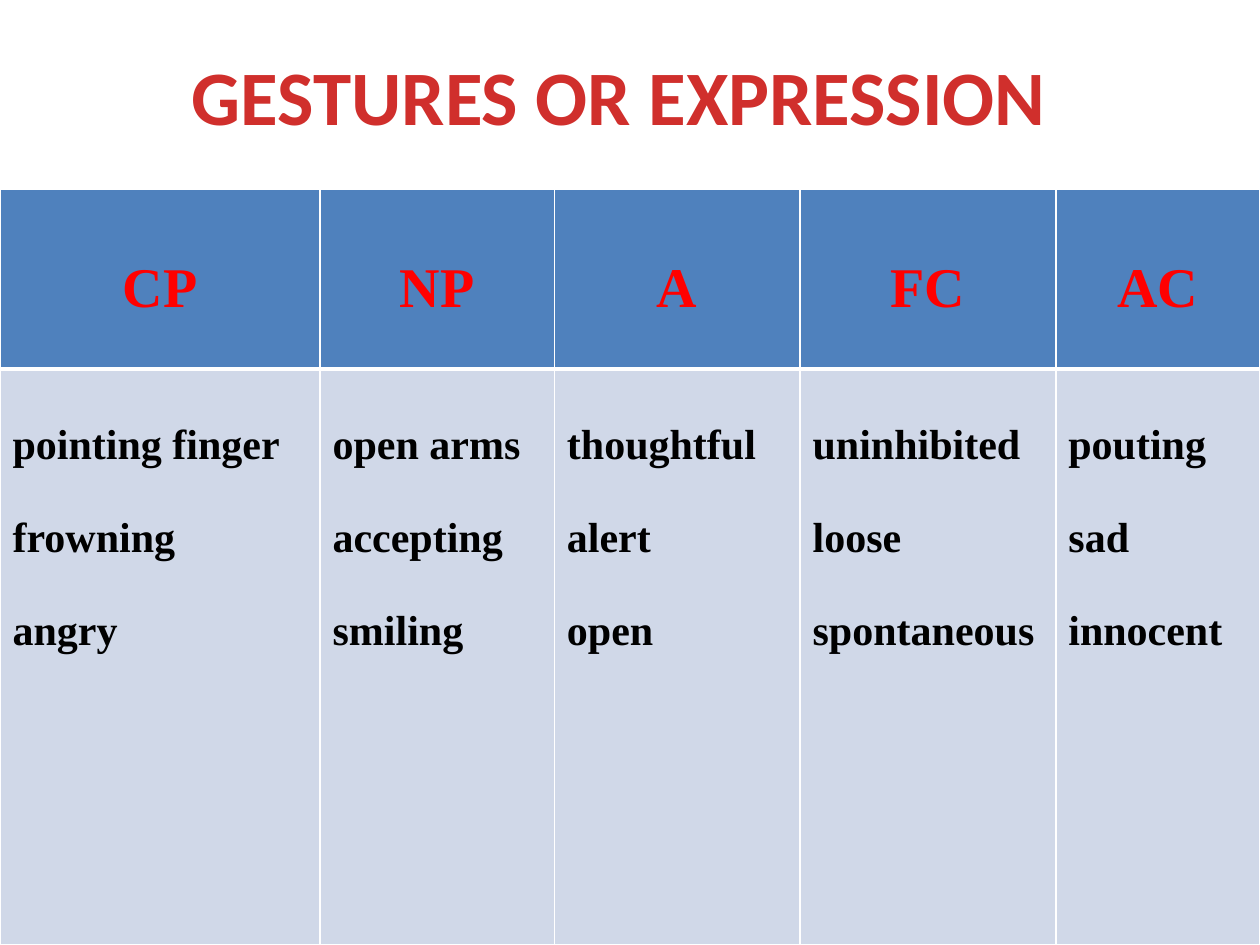
import pptx
import pptx.util
import pptx.dml.color
import pptx.enum.text
import pptx.oxml
import lxml.etree

COLOURS = {"title": "D02F2C", "heading": "FF0000", "body": "000000",
           "header_fill": "4F81BD", "body_fill": "D0D8E8", "border": "FFFFFF"}
GESTURES = {
    "CP": ["pointing finger", "frowning", "angry"],
    "NP": ["open arms", "accepting", "smiling"],
    "A": ["thoughtful", "alert", "open"],
    "FC": ["uninhibited", "loose", "spontaneous"],
    "AC": ["pouting", "sad", "innocent"],
}
COLUMN_WIDTHS = [2.54, 1.86, 1.95, 2.03, 1.62]
ROW_HEIGHTS = [1.43, 4.57]
CENTER = pptx.enum.text.PP_ALIGN.CENTER
LEFT = pptx.enum.text.PP_ALIGN.LEFT


def format_text(para, font_name, size, colour, alignment):
    para.alignment = alignment
    for span in para.runs:
        span.font.name = font_name
        span.font.size = pptx.util.Pt(size)
        span.font.bold = True
        span.font.color.rgb = pptx.dml.color.RGBColor.from_string(COLOURS[colour])


def add_border(cell, side, width):
    properties = cell._tc.get_or_add_tcPr()
    line = lxml.etree.SubElement(properties, pptx.oxml.ns.qn(f"a:ln{side}"),
                                 w=str(pptx.util.Pt(width)))
    fill = lxml.etree.SubElement(line, pptx.oxml.ns.qn("a:solidFill"))
    lxml.etree.SubElement(fill, pptx.oxml.ns.qn("a:srgbClr"), val=COLOURS["border"])


deck = pptx.Presentation()
deck.slide_width = pptx.util.Inches(10)
deck.slide_height = pptx.util.Inches(7.5)
page = deck.slides.add_slide(deck.slide_layouts[5])

# Title
title = page.shapes.title
title.left, title.top = pptx.util.Inches(1.08), pptx.util.Inches(0.33)
title.width, title.height = pptx.util.Inches(7.67), pptx.util.Inches(0.84)
title.text_frame.text = "GESTURES OR EXPRESSION"
format_text(title.text_frame.paragraphs[0], "Calibri", 44, "title", CENTER)

# Table across the lower four fifths of the slide
table = page.shapes.add_table(
    len(ROW_HEIGHTS), len(GESTURES), 0, deck.slide_height // 5,
    deck.slide_width, deck.slide_height * 4 // 5).table
for column, width in zip(table.columns, COLUMN_WIDTHS):
    column.width = pptx.util.Inches(width)
for row, height in zip(table.rows, ROW_HEIGHTS):
    row.height = pptx.util.Inches(height)

# Each column: heading above, gestures below
for column_index, (heading, gestures) in enumerate(GESTURES.items()):
    rows = [([heading], 32, "heading", "header_fill", CENTER),
            (gestures, 24, "body", "body_fill", LEFT)]
    for row_index, (lines, size, colour, fill, alignment) in enumerate(rows):
        cell = table.cell(row_index, column_index)
        for side in "LRTB":
            heavy = (row_index, side) in [(0, "B"), (1, "T")]
            add_border(cell, side, 3 if heavy else 1)
        cell.fill.solid()
        cell.fill.fore_color.rgb = pptx.dml.color.RGBColor.from_string(COLOURS[fill])
        cell.text_frame.text = "\n".join(lines)
        for para in cell.text_frame.paragraphs:
            para.line_spacing = 2.0
            format_text(para, "Times New Roman", size, colour, alignment)

deck.save("out.pptx")
